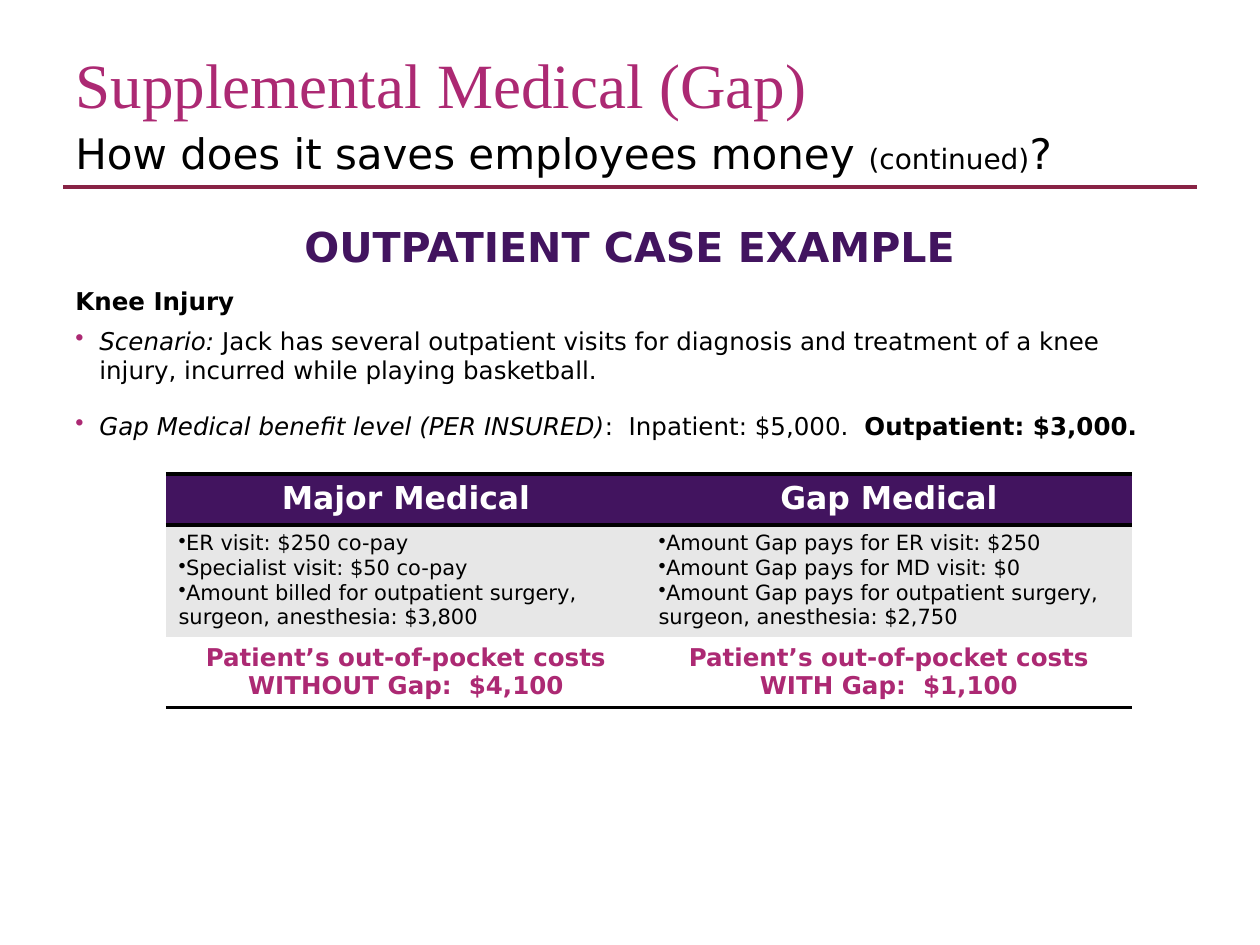
from dataclasses import dataclass

from lxml.etree import SubElement
from pptx import Presentation
from pptx.dml.color import RGBColor
from pptx.enum.shapes import MSO_CONNECTOR
from pptx.enum.text import MSO_ANCHOR, MSO_AUTO_SIZE, PP_ALIGN
from pptx.oxml.ns import qn
from pptx.util import Emu, Pt

EMU_PER_PX = 914400 / 126


def px(n):
    return Emu(round(n * EMU_PER_PX))


@dataclass(frozen=True)
class Theme:
    serif: str = "Times New Roman"
    sans: str = "DejaVu Sans"
    magenta: str = "AC2973"
    purple: str = "42145F"
    rule: str = "882345"
    black: str = "000000"
    white: str = "FFFFFF"
    grey: str = "E7E7E7"
    title: float = 36
    subtitle: float = 24
    heading: float = 23.5
    table_head: float = 18
    aside: float = 16
    body: float = 14
    small: float = 12


class SlideBuilder:
    def __init__(self, slide, theme):
        self.s = slide
        self.theme = theme

    def add_paragraphs(self, tf, paragraphs):
        """Each paragraph is (paragraph format, base run format, [(text, run changes)])."""
        for i, (layout, base, runs) in enumerate(paragraphs):
            p = tf.paragraphs[0] if i == 0 else tf.add_paragraph()
            self.format_paragraph(p, **layout)
            for text, changes in runs:
                r = p.add_run()
                r.text = text
                self.format_font(r.font, **{**base, **changes})

    def format_paragraph(self, p, hang=0, bullet=None, bullet_color=None, **values):
        pPr = p._p.get_or_add_pPr()
        pPr.set("marL", str(px(hang)))
        pPr.set("indent", str(px(-hang)))
        if bullet_color:
            clr = SubElement(pPr, qn("a:buClr"))
            SubElement(clr, qn("a:srgbClr"), val=bullet_color)
        if bullet:
            SubElement(pPr, qn("a:buChar"), char=bullet)
        for name, value in values.items():
            setattr(p, name, value)

    def format_font(self, font, size, color, name=None, **values):
        values.update(size=Pt(size), name=name or self.theme.sans)
        for key, value in values.items():
            setattr(font, key, value)
        font.color.rgb = RGBColor.from_string(color)

    def fill_text(self, sp, paragraphs, **frame):
        tf = sp.text_frame
        frame = {"word_wrap": True, "auto_size": MSO_AUTO_SIZE.NONE, **frame}
        for name, value in frame.items():
            setattr(tf, name, value)
        self.add_paragraphs(tf, paragraphs)

    def title(self, box, paragraphs):
        sp = self.s.shapes.title
        sp.left, sp.top, sp.width, sp.height = map(px, box)
        self.fill_text(sp, paragraphs, vertical_anchor=MSO_ANCHOR.MIDDLE)

    def text(self, box, paragraphs, **frame):
        sp = self.s.shapes.add_textbox(*map(px, box))
        self.fill_text(sp, paragraphs, **frame)

    def line(self, x1, y1, x2, y2, color, width):
        ln = self.s.shapes.add_connector(MSO_CONNECTOR.STRAIGHT, *map(px, (x1, y1, x2, y2)))
        ln.line.color.rgb = RGBColor.from_string(color)
        ln.line.width = Pt(width)
        SubElement(ln._element.spPr, qn("a:effectLst"))

    def border(self, cell, ruled):
        """Rule the named sides (T, B) in black and clear the others."""
        tcPr = cell._tc.get_or_add_tcPr()
        for i, side in enumerate("LRTB"):
            ln = SubElement(tcPr, qn(f"a:ln{side}"), w=str(Pt(2)))
            if side in ruled:
                solid = SubElement(ln, qn("a:solidFill"))
                SubElement(solid, qn("a:srgbClr"), val=self.theme.black)
            else:
                SubElement(ln, qn("a:noFill"))
            tcPr.insert(i, ln)

    def table(self, left, top, widths, rows):
        """Each row is (height, fill, ruled sides, paragraph format, font, cells of lines)."""
        heights = [row[0] for row in rows]
        box = (left, top, sum(widths), sum(heights))
        tbl = self.s.shapes.add_table(len(rows), len(widths), *map(px, box)).table
        tbl.first_row = tbl.horz_banding = False
        for col, width in zip(tbl.columns, widths):
            col.width = px(width)
        for tr, (height, fill, ruled, layout, font, cells) in zip(tbl.rows, rows):
            tr.height = px(height)
            for cell, lines in zip(tr.cells, cells):
                cell.fill.solid()
                cell.fill.fore_color.rgb = RGBColor.from_string(fill)
                self.border(cell, ruled)
                self.add_paragraphs(cell.text_frame,
                                    [(layout, font, [(line, {})]) for line in lines])


def main():
    prs = Presentation()
    prs.slide_width, prs.slide_height = px(1260), px(945)
    t = Theme()
    b = SlideBuilder(prs.slides.add_slide(prs.slide_layouts[5]), t)

    left_aligned = {"alignment": PP_ALIGN.LEFT}
    centred = {"alignment": PP_ALIGN.CENTER}
    body = {"size": t.body, "color": t.black}
    bold, italic = {"bold": True}, {"italic": True}

    b.line(63, 187, 1197, 187, t.rule, 2)
    b.title((63, 38, 1134, 91), [
        (left_aligned, {"size": t.title, "color": t.magenta, "name": t.serif},
         [("Supplemental Medical (Gap)", {})]),
    ])
    b.text((63, 129, 1134, 48), [
        (left_aligned, {"size": t.subtitle, "color": t.black},
         [("How does it saves employees money ", {}),
          ("(continued)", {"size": t.aside}),
          ("?", {})]),
    ], vertical_anchor=MSO_ANCHOR.MIDDLE)

    hanging = {"hang": 24, "space_before": Pt(6)}
    bulleted = {**hanging, "space_after": Pt(9), "bullet": "•", "bullet_color": t.magenta}
    b.text((63, 212, 1134, 561), [
        ({**centred, "hang": 24, "space_after": Pt(3)},
         {"size": t.heading, "color": t.purple, **bold},
         [("OUTPATIENT CASE EXAMPLE", {})]),
        (hanging, body, [("Knee Injury", bold)]),
        (bulleted, body,
         [("Scenario:", italic),
          (" Jack has several outpatient visits for diagnosis and treatment of a knee "
           "injury, incurred while playing basketball.", {})]),
        (bulleted, body,
         [("Gap Medical benefit level (PER INSURED)", italic),
          (":  Inpatient: $5,000.  ", {}),
          ("Outpatient: $3,000.", bold)]),
    ], margin_top=px(9))

    b.table(166, 474, (480, 486), [
        (51, t.purple, "TB", centred, {"size": t.table_head, "color": t.white, **bold},
         [["Major Medical"], ["Gap Medical"]]),
        (112, t.grey, "T", {"bullet": "•"}, {"size": t.small, "color": t.black},
         [["ER visit: $250 co-pay",
           "Specialist visit: $50 co-pay",
           "Amount billed for outpatient surgery, surgeon, anesthesia: $3,800"],
          ["Amount Gap pays for ER visit: $250",
           "Amount Gap pays for MD visit: $0",
           "Amount Gap pays for outpatient surgery, surgeon, anesthesia: $2,750"]]),
        (69, t.white, "B", centred, {"size": t.body, "color": t.magenta, **bold},
         [["Patient’s out-of-pocket costs", "WITHOUT Gap:  $4,100"],
          ["Patient’s out-of-pocket costs", "WITH Gap:  $1,100"]]),
    ])
    prs.save("out.pptx")


if __name__ == "__main__":
    main()
